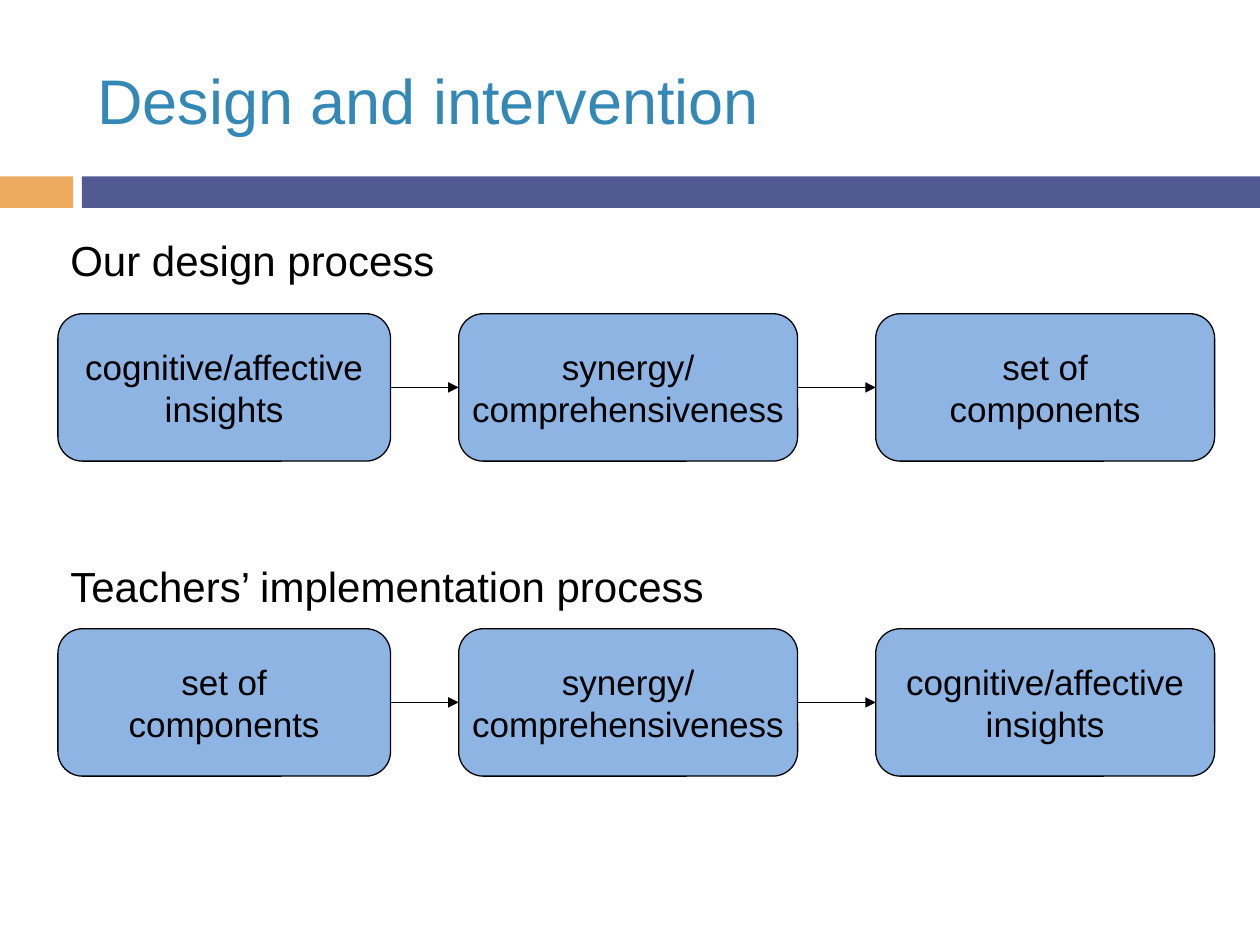
from lxml.etree import SubElement
from pptx import Presentation
from pptx.dml.color import RGBColor
from pptx.enum.shapes import MSO_CONNECTOR, MSO_SHAPE
from pptx.enum.text import MSO_ANCHOR, MSO_AUTO_SIZE, PP_ALIGN
from pptx.oxml.ns import qn
from pptx.util import Inches, Pt

COLOURS = {
    "title": "3488B6",
    "text": "000000",
    "accent": "EDAA61",
    "band": "525A93",
    "box": "8EB4E3",
    "line": "000000",
}
FONT = "Arial"
BOX_COLUMNS = [(0.46, 2.64), (3.64, 2.69), (6.95, 2.69)]
BOX_HEIGHT = 1.17
INSIGHTS = ["cognitive/affective", "insights"]
SYNERGY = ["synergy/", "comprehensiveness"]
COMPONENTS = ["set of", "components"]
PROCESSES = [
    ("Our design process", 1.81, 3.12, 2.49, [INSIGHTS, SYNERGY, COMPONENTS]),
    ("Teachers’ implementation process", 4.4, 5.29, 4.99, [COMPONENTS, SYNERGY, INSIGHTS]),
]


def colour(name):
    """Return the named colour."""
    return RGBColor.from_string(COLOURS[name])


def write_lines(text_frame, lines, size, colour_name="text", alignment=PP_ALIGN.LEFT):
    """Write each line as a paragraph with one formatted run."""
    for index, line in enumerate(lines):
        paragraph = text_frame.add_paragraph() if index else text_frame.paragraphs[0]
        paragraph.alignment = alignment
        run = paragraph.add_run()
        run.text = line
        run.font.name = FONT
        run.font.size = Pt(size)
        run.font.color.rgb = colour(colour_name)


def add_title(slide, text):
    """Place and format the title placeholder."""
    title = slide.shapes.title
    title.left, title.top = Inches(0.67), Inches(0.25)
    title.width, title.height = Inches(8.92), Inches(1.08)
    title.text_frame.auto_size = MSO_AUTO_SIZE.NONE
    title.text_frame.vertical_anchor = MSO_ANCHOR.MIDDLE
    write_lines(title.text_frame, [text], 36, "title")


def add_filled_shape(slide, kind, left, top, width, height, fill):
    """Add a flat preset shape without an outline."""
    shape = slide.shapes.add_shape(
        kind, Inches(left), Inches(top), Inches(width), Inches(height)
    )
    shape.shadow.inherit = False
    shape.fill.solid()
    shape.fill.fore_color.rgb = colour(fill)
    shape.line.fill.background()
    return shape


def add_heading(slide, text, top, width):
    """Add the heading above a process."""
    heading = slide.shapes.add_textbox(
        Inches(0.46), Inches(top), Inches(width), Inches(0.5)
    )
    heading.text_frame.word_wrap = False
    heading.text_frame.auto_size = MSO_AUTO_SIZE.SHAPE_TO_FIT_TEXT
    write_lines(heading.text_frame, [text], 24)


def add_box(slide, left, top, width, lines):
    """Add an outlined rounded box with centred lines."""
    box = add_filled_shape(
        slide, MSO_SHAPE.ROUNDED_RECTANGLE, left, top, width, BOX_HEIGHT, "box"
    )
    box.line.color.rgb = colour("line")
    box.line.width = Pt(0.75)
    box.text_frame.word_wrap = False
    box.text_frame.vertical_anchor = MSO_ANCHOR.MIDDLE
    write_lines(box.text_frame, lines, 20, alignment=PP_ALIGN.CENTER)
    return box


def add_arrow(slide, source, target):
    """Join the right side of one box to the left side of the next."""
    arrow = slide.shapes.add_connector(MSO_CONNECTOR.STRAIGHT, 0, 0, 0, 0)
    arrow.begin_connect(source, 3)
    arrow.end_connect(target, 1)
    arrow.line.color.rgb = colour("line")
    arrow.line.width = Pt(0.75)
    SubElement(arrow.line._get_or_add_ln(), qn("a:tailEnd"), type="triangle")
    SubElement(arrow._element.spPr, qn("a:effectLst"))


def add_process(slide, heading, heading_top, heading_width, box_top, steps):
    """Add a heading and its row of linked boxes."""
    add_heading(slide, heading, heading_top, heading_width)
    boxes = [
        add_box(slide, left, box_top, width, lines)
        for (left, width), lines in zip(BOX_COLUMNS, steps)
    ]
    for source, target in zip(boxes, boxes[1:]):
        add_arrow(slide, source, target)


def main():
    """Build and save the slide."""
    presentation = Presentation()
    presentation.slide_width, presentation.slide_height = Inches(10), Inches(7.5)
    slide = presentation.slides.add_slide(presentation.slide_layouts[5])
    add_filled_shape(slide, MSO_SHAPE.RECTANGLE, 0, 1.4, 0.58, 0.25, "accent")
    add_filled_shape(slide, MSO_SHAPE.RECTANGLE, 0.65, 1.4, 9.35, 0.25, "band")
    add_title(slide, "Design and intervention")
    for process in PROCESSES:
        add_process(slide, *process)
    presentation.save("out.pptx")


if __name__ == "__main__":
    main()
